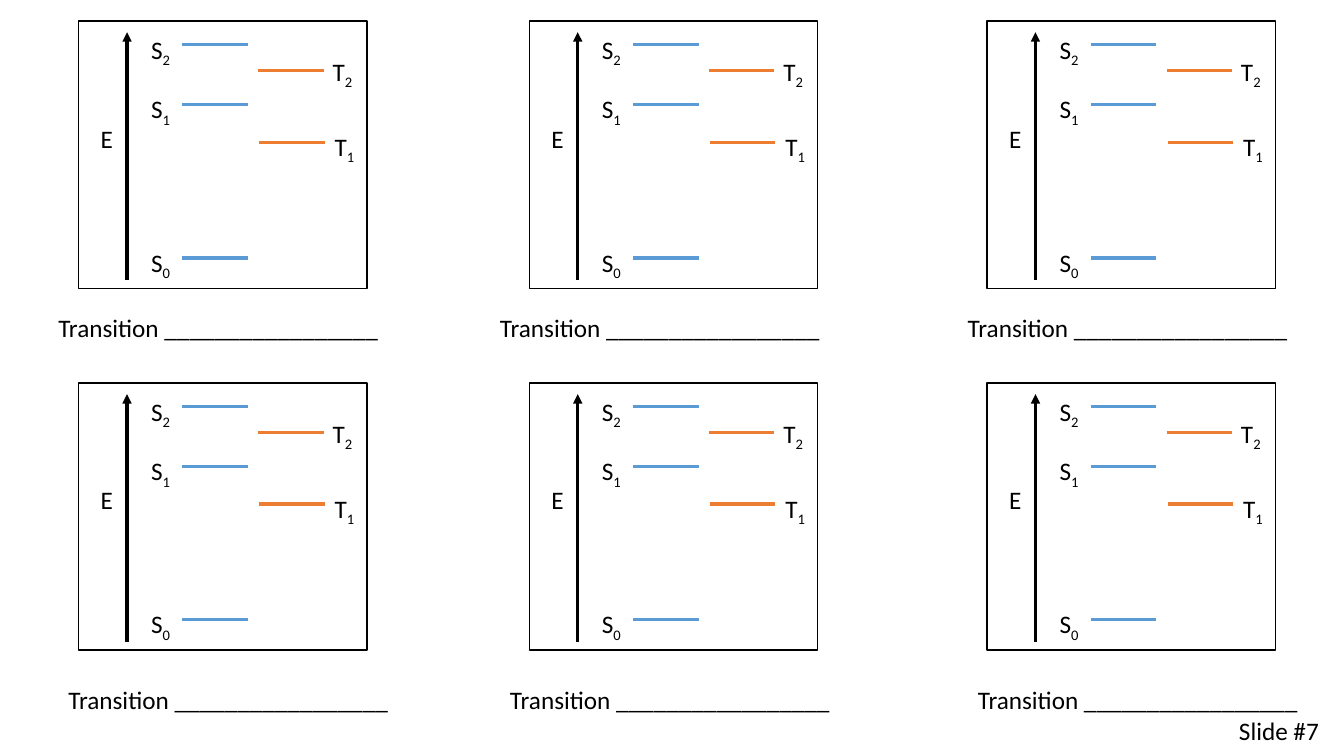
import pptx
import pptx.util
import pptx.dml.color
import pptx.enum.shapes
import pptx.enum.text
import pptx.oxml
import pptx.oxml.ns
from pptx.util import Inches

BLACK, SINGLET, TRIPLET = "000000", "5B9BD5", "ED7D31"
LEVEL_WIDTH = 0.65

# Diagram and caption grid
FRAME_LEFTS = (0.78, 5.25, 9.79)
CAPTION_LEFTS = (0.48, 4.86, 9.5)
# Frame top, caption top, caption shift to the right
ROWS = ((0.21, 3.05, 0), (3.8, 6.74, 0.1))

# State, number, colour, line left and top, label left and top, within the frame
LEVELS = (
    ("S", "0", SINGLET, 1.03, 2.35, 0.62, 2.19),
    ("S", "1", SINGLET, 1.03, 0.83, 0.62, 0.67),
    ("S", "2", SINGLET, 1.03, 0.23, 0.62, 0.08),
    ("T", "1", TRIPLET, 1.79, 1.2, 2.44, 1.04),
    ("T", "2", TRIPLET, 1.78, 0.49, 2.42, 0.3),
)


def rgb(value):
    return pptx.dml.color.RGBColor.from_string(value)


def add_label(shapes, left, top, width, height, text, subscript=""):
    box = shapes.add_textbox(Inches(left), Inches(top), Inches(width), Inches(height))
    frame = box.text_frame
    frame.word_wrap = True
    frame.auto_size = pptx.enum.text.MSO_AUTO_SIZE.SHAPE_TO_FIT_TEXT
    frame.text = text
    paragraph = frame.paragraphs[0]
    if subscript:
        number = paragraph.add_run()
        number.text = subscript
        number.font._element.set("baseline", "-25000")
    for run in paragraph.runs:
        run.font.name = "Calibri"
        run.font.size = pptx.util.Pt(18)
        run.font.color.rgb = rgb(BLACK)


def add_line(shapes, x1, y1, x2, y2, color, arrow=False):
    line = shapes.add_connector(pptx.enum.shapes.MSO_CONNECTOR.STRAIGHT,
                                Inches(x1), Inches(y1), Inches(x2), Inches(y2))
    line.line.color.rgb = rgb(color)
    line.line.width = pptx.util.Pt(2.25)
    if arrow:
        tail = pptx.oxml.parse_xml(
            f'<a:tailEnd {pptx.oxml.ns.nsdecls("a")} type="triangle"/>')
        line.line._get_or_add_ln().append(tail)
    properties = line._element.spPr
    properties.append(pptx.oxml.parse_xml(
        f'<a:effectLst {pptx.oxml.ns.nsdecls("a")}/>'))


def add_frame(shapes, left, top):
    frame = shapes.add_shape(pptx.enum.shapes.MSO_SHAPE.RECTANGLE,
                             Inches(left), Inches(top), Inches(2.86), Inches(2.65))
    frame.shadow.inherit = False
    frame.fill.background()
    frame.line.color.rgb = rgb(BLACK)
    frame.line.width = pptx.util.Pt(1)


def add_energy_diagram(slide, left, top):
    shapes = slide.shapes.add_group_shape().shapes
    add_frame(shapes, left, top)
    # Energy axis
    axis = left + 0.48
    add_line(shapes, axis, top + 2.57, axis, top + 0.11, BLACK, arrow=True)
    add_label(shapes, left + 0.12, top + 0.96, 0.36, 0.31, "E")
    # Energy levels
    for state, number, color, line_x, line_y, label_x, label_y in LEVELS:
        x, y = left + line_x, top + line_y
        add_line(shapes, x, y, x + LEVEL_WIDTH, y, color)
        add_label(shapes, left + label_x, top + label_y, 0.41, 0.31, state, number)


def main():
    presentation = pptx.Presentation()
    presentation.slide_width = Inches(13.33)
    presentation.slide_height = Inches(7.5)
    slide = presentation.slides.add_slide(presentation.slide_layouts[6])

    # Six diagrams, each with a caption to fill in
    for frame_top, caption_top, shift in ROWS:
        for frame_left, caption_left in zip(FRAME_LEFTS, CAPTION_LEFTS):
            add_energy_diagram(slide, frame_left, frame_top)
            add_label(slide.shapes, caption_left + shift, caption_top, 3.44, 0.41,
                      "Transition " + "_" * 17)

    # Slide number
    add_label(slide.shapes, 12.19, 7.05, 1.14, 0.4, "Slide #7")
    presentation.save("out.pptx")


if __name__ == "__main__":
    main()
